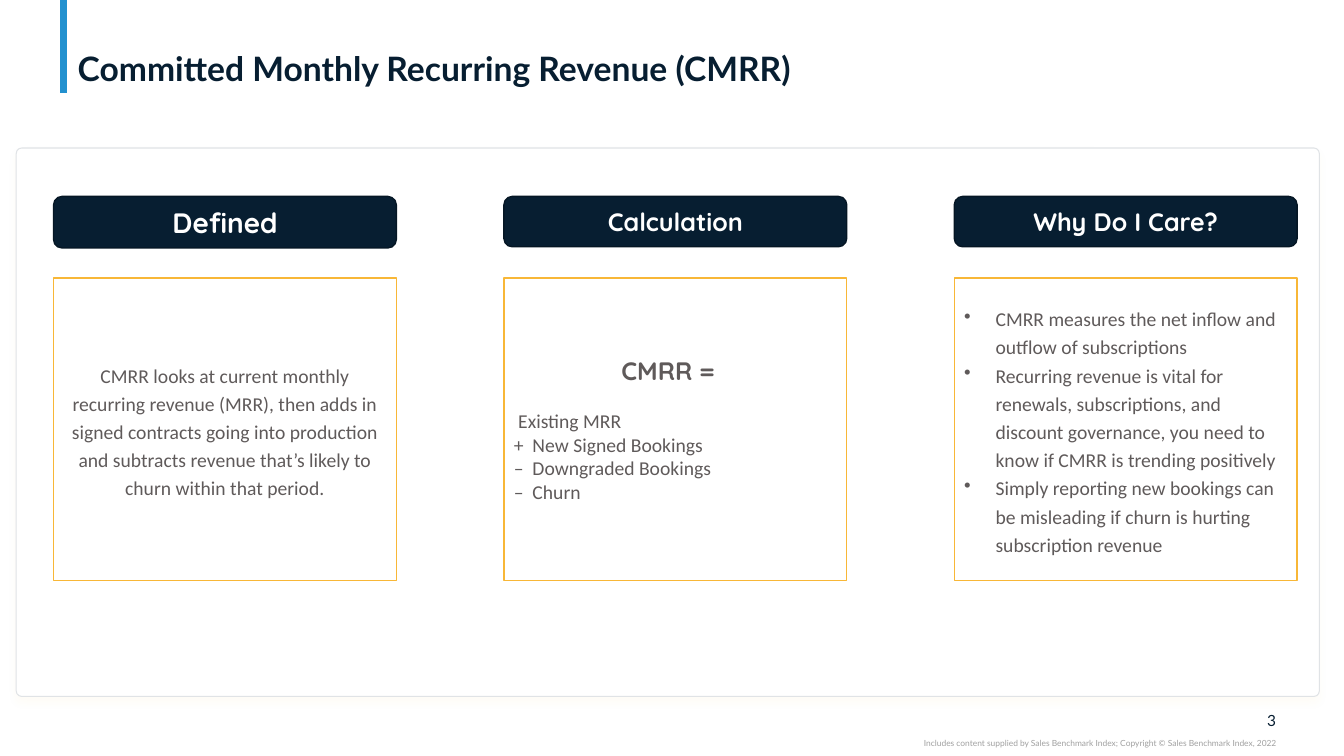
from lxml.etree import SubElement
from pptx import Presentation
from pptx.dml.color import RGBColor
from pptx.enum.shapes import MSO_CONNECTOR, MSO_SHAPE
from pptx.enum.text import MSO_ANCHOR, PP_ALIGN
from pptx.oxml.ns import qn
from pptx.util import Cm, Pt

NAVY = RGBColor(0x07, 0x1E, 0x31)
NAVY_EDGE = RGBColor(0x05, 0x16, 0x24)
BLUE = RGBColor(0x23, 0x91, 0xCF)
AMBER = RGBColor(0xF8, 0xB7, 0x37)
GREY = RGBColor(0x5F, 0x5A, 0x5A)
PALE_GREY = RGBColor(0xA0, 0xA0, 0xA0)
PANEL_EDGE = RGBColor(0xE0, 0xE3, 0xE6)
WHITE = RGBColor(0xFF, 0xFF, 0xFF)

BODY_FONT = {"name": "Calibri", "size": Pt(14)}
LEFT = {"alignment": PP_ALIGN.LEFT}
CENTRE = {"alignment": PP_ALIGN.CENTER}
RIGHT = {"alignment": PP_ALIGN.RIGHT}
NO_MARGINS = {f"margin_{side}": 0 for side in ("left", "top", "right", "bottom")}


def apply(target, values):
    for name, value in values.items():
        setattr(target, name, value)


def write(frame, lines, frame_format):
    apply(frame, {"word_wrap": True, **frame_format})
    for number, (text, font, color, layout, indents, bullet) in enumerate(lines):
        paragraph = frame.paragraphs[0] if number == 0 else frame.add_paragraph()
        properties = paragraph._p.get_or_add_pPr()
        for name, length in indents.items():
            properties.set(name, str(Cm(length)))
        if bullet:
            SubElement(properties, qn("a:buChar")).set("char", bullet)
        apply(paragraph, layout)
        run = paragraph.add_run()
        run.text = text
        apply(run.font, font)
        run.font.color.rgb = color


def line_of(text, font, color, layout=LEFT, indents={}, bullet=None):
    return text, font, color, layout, indents, bullet


def add_box(slide, kind, box, fill, edge, width):
    shape = slide.shapes.add_shape(kind, *map(Cm, box))
    shape.shadow.inherit = False
    shape.fill.solid()
    shape.fill.fore_color.rgb = fill
    shape.line.color.rgb = edge
    shape.line.width = Pt(width)
    return shape


def add_label(slide, box, line, frame_format):
    label = slide.shapes.add_textbox(*map(Cm, box))
    write(label.text_frame, [line], {**NO_MARGINS, **frame_format})


def add_title(slide, box, title):
    left, top, width, height = box
    accent = slide.shapes.add_connector(
        MSO_CONNECTOR.STRAIGHT, Cm(left), Cm(top), Cm(left), Cm(top + height))
    accent.line.color.rgb = BLUE
    accent.line.width = Pt(5)
    SubElement(accent._element.spPr, qn("a:effectLst"))
    font = {"name": "Lato", "size": Pt(24), "bold": True}
    add_label(slide, (left + 0.36, top + 0.1, width - 0.36, height - 0.2),
              line_of(title, font, NAVY, {**LEFT, "line_spacing": 0.9}),
              {"vertical_anchor": MSO_ANCHOR.BOTTOM, "margin_left": Cm(0.0)})


def add_footer(slide, box, number, credit):
    left, top, width, height = box
    add_label(slide, (left + width - 0.84, top, 0.84, 0.48),
              line_of(number, {"name": "Lato", "size": Pt(11)}, NAVY, RIGHT),
              {"vertical_anchor": MSO_ANCHOR.MIDDLE})
    add_label(slide, (left, top + height - 0.25, width, 0.25),
              line_of(credit, {"name": "Lato", "size": Pt(6)}, PALE_GREY, RIGHT), {})


def add_panel(slide, box):
    panel = add_box(slide, MSO_SHAPE.ROUNDED_RECTANGLE, box, WHITE, PANEL_EDGE, 0.75)
    panel.adjustments[0] = 0.01
    effects = panel._element.spPr.find(qn("a:effectLst"))
    glow = SubElement(effects, qn("a:outerShdw"), blurRad=str(Pt(6)),
                      dist=str(Pt(4)), dir="5400000", algn="t", rotWithShape="0")
    color = SubElement(glow, qn("a:srgbClr"), val=str(AMBER))
    SubElement(color, qn("a:alpha"), val="4000")


def add_column(slide, box, heading, heading_size, heading_height, body):
    left, top, width, height = box
    header = add_box(slide, MSO_SHAPE.ROUNDED_RECTANGLE,
                     (left, top, width, heading_height), NAVY, NAVY_EDGE, 1)
    font = {"name": "Quicksand", "size": Pt(heading_size), "bold": True}
    middle = {"vertical_anchor": MSO_ANCHOR.MIDDLE}
    write(header.text_frame, [line_of(heading, font, WHITE, CENTRE)], middle)
    card = add_box(slide, MSO_SHAPE.RECTANGLE,
                   (left, top + 2.06, width, height - 2.06), WHITE, AMBER, 1)
    write(card.text_frame, body, middle)


def main():
    deck = Presentation()
    deck.slide_width, deck.slide_height = Cm(33.87), Cm(19.05)
    slide = deck.slides.add_slide(deck.slide_layouts[6])

    add_footer(slide, (19.05, 17.91, 13.11, 0.93), "3",
               "Includes content supplied by Sales Benchmark Index; "
               "Copyright © Sales Benchmark Index, 2022")
    add_title(slide, (1.6, 0, 30.56, 2.34), "Committed Monthly Recurring Revenue (CMRR)")
    add_panel(slide, (0.41, 3.73, 32.84, 13.82))

    definition = [line_of(
        "CMRR looks at current monthly recurring revenue (MRR), then adds in signed "
        "contracts going into production and subtracts revenue that’s likely to churn "
        "within that period.", BODY_FONT, GREY, {**CENTRE, "line_spacing": 1.2})]

    formula_font = {"name": "Quicksand", "size": Pt(18), "bold": True}
    formula = [
        line_of("CMRR =", formula_font, GREY, {**CENTRE, "space_after": Pt(17)},
                {"marR": 0.36}),
        line_of("Existing MRR", BODY_FONT, GREY, LEFT, {"marL": 0.11}),
    ] + [
        line_of(f"{sign}\t{term}", BODY_FONT, GREY, LEFT, {"marL": 0.47, "indent": -0.47})
        for sign, term in (("+", "New Signed Bookings"), ("–", "Downgraded Bookings"),
                           ("–", "Churn"))
    ]

    reasons = [
        line_of(reason, BODY_FONT, GREY, {**LEFT, "line_spacing": 1.2},
                {"marL": 0.79, "indent": -0.79}, "•")
        for reason in (
            "CMRR measures the net inflow and outflow of subscriptions",
            "Recurring revenue is vital for renewals, subscriptions, and discount "
            "governance, you need to know if CMRR is trending positively",
            "Simply reporting new bookings can be misleading if churn is hurting "
            "subscription revenue")
    ]

    columns = (("Defined", 20, 1.3, definition), ("Calculation", 18, 1.27, formula),
               ("Why Do I Care?", 18, 1.27, reasons))
    for index, column in enumerate(columns):
        add_column(slide, (1.35 + 11.35 * index, 4.95, 8.64, 9.68), *column)

    deck.save("out.pptx")


if __name__ == "__main__":
    main()
